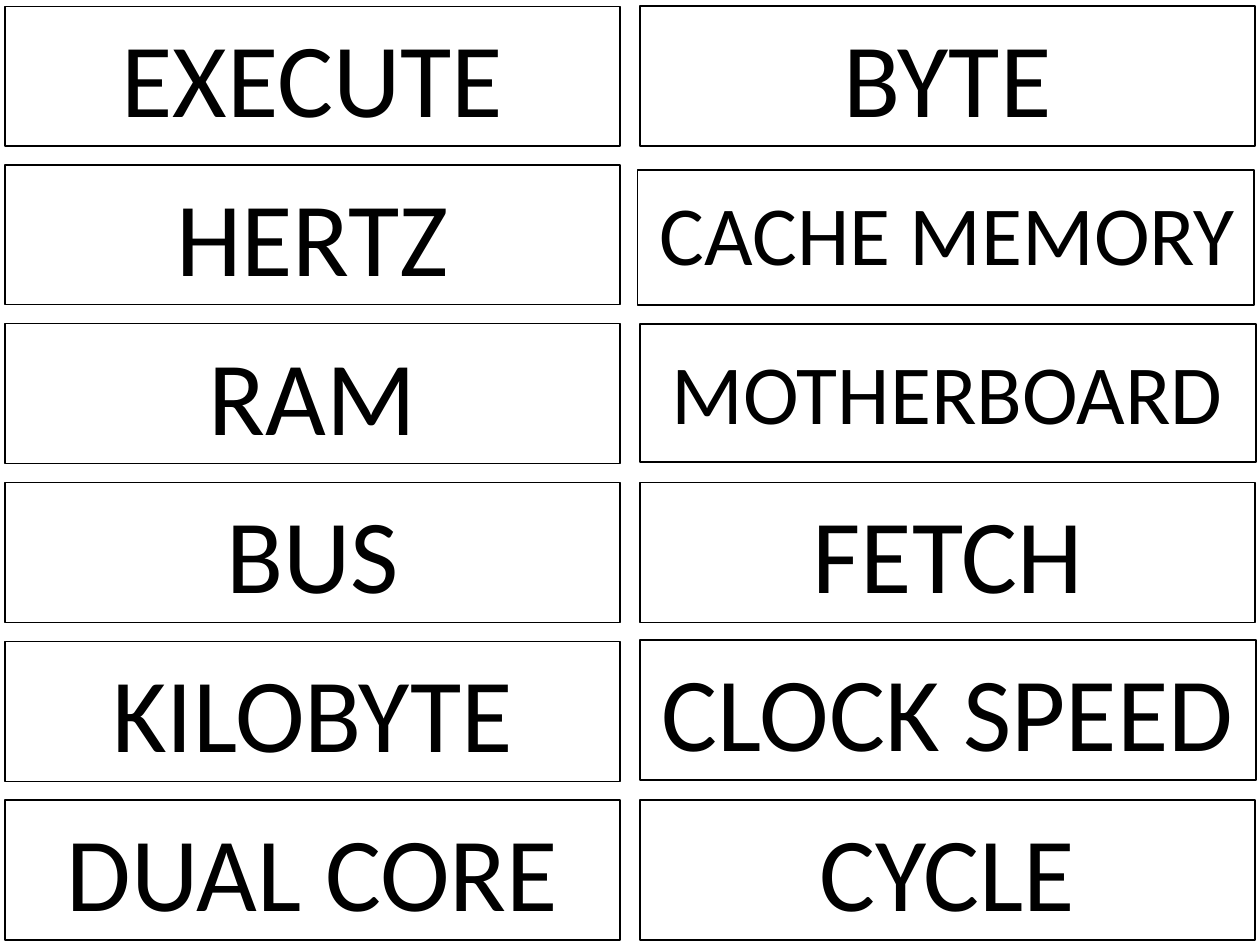
from pptx import Presentation
from pptx.dml.color import RGBColor
from pptx.enum.shapes import MSO_SHAPE
from pptx.enum.text import MSO_ANCHOR, MSO_AUTO_SIZE, PP_ALIGN
from pptx.util import Inches, Pt

BLACK = RGBColor(0, 0, 0)
FONT = "Calibri"
LEFT, TOP = 0.04, 0.05
COLUMN_STEP, ROW_STEP = 5.04, 1.26
CARD_WIDTH, CARD_HEIGHT = 4.88, 1.11
THIN, THICK = 0.75, 1

CARDS = [
    ("EXECUTE", 0, 0, THIN),
    ("BYTE", 1, 0, THICK),
    ("HERTZ", 0, 1, THIN),
    ("RAM", 0, 2, THIN),
    ("BUS", 0, 3, THIN),
    ("FETCH", 1, 3, THIN),
    ("KILOBYTE", 0, 4, THIN),
    ("DUAL CORE", 0, 5, THIN),
    ("CYCLE", 1, 5, THICK),
]
CAPTIONS = [
    ("CACHE MEMORY", 1, 1.39, 0.91, 48),
    ("MOTHERBOARD", 1, 2.65, 0.91, 48),
    ("CLOCK SPEED", 1, 5.08, 1.11, 60),
]
FRAMES = [(5.08, 5.08, 1.11), (5.08, 2.57, 1.1), (5.06, 1.35, 1.07)]


def column_left(column):
    return LEFT + column * COLUMN_STEP


def write_word(holder, word, size):
    body = holder.text_frame
    body.word_wrap = True
    body.auto_size = MSO_AUTO_SIZE.SHAPE_TO_FIT_TEXT
    body.vertical_anchor = MSO_ANCHOR.TOP
    line = body.paragraphs[0]
    line.alignment = PP_ALIGN.CENTER
    run = line.add_run()
    run.text = word
    run.font.name = FONT
    run.font.size = Pt(size)
    run.font.color.rgb = BLACK


def add_frame(slide, left, top, width, height, weight):
    frame = slide.shapes.add_shape(
        MSO_SHAPE.RECTANGLE, Inches(left), Inches(top), Inches(width), Inches(height)
    )
    frame.shadow.inherit = False
    frame.fill.background()
    frame.line.color.rgb = BLACK
    frame.line.width = Pt(weight)
    return frame


def add_card(slide, word, column, row, weight):
    top = TOP + row * ROW_STEP
    card = add_frame(slide, column_left(column), top, CARD_WIDTH, CARD_HEIGHT, weight)
    write_word(card, word, 60)


def add_caption(slide, word, column, top, height, size):
    caption = slide.shapes.add_textbox(
        Inches(column_left(column)), Inches(top), Inches(CARD_WIDTH), Inches(height)
    )
    write_word(caption, word, size)


def main():
    deck = Presentation()
    deck.slide_width, deck.slide_height = Inches(10), Inches(7.5)
    slide = deck.slides.add_slide(deck.slide_layouts[6])
    for card in CARDS:
        add_card(slide, *card)
    for caption in CAPTIONS:
        add_caption(slide, *caption)
    for left, top, height in FRAMES:
        add_frame(slide, left, top, 4.89, height, THICK)
    deck.save("out.pptx")


if __name__ == "__main__":
    main()
